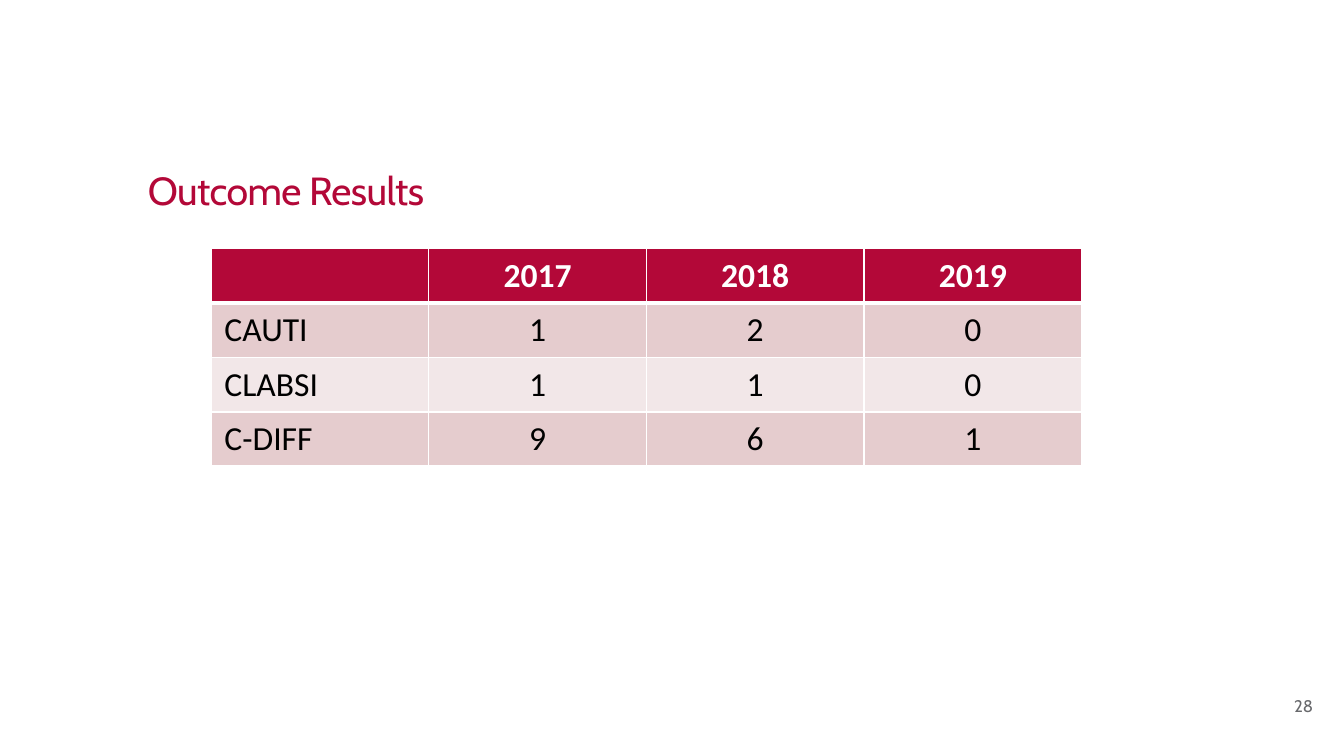
from dataclasses import dataclass

from lxml import etree
from pptx import Presentation
from pptx.dml.color import RGBColor
from pptx.enum.text import MSO_ANCHOR, PP_ALIGN
from pptx.oxml.ns import qn
from pptx.util import Emu, Pt

PX = 4572
LEFT = PP_ALIGN.LEFT
CENTER = PP_ALIGN.CENTER
RIGHT = PP_ALIGN.RIGHT
MIDDLE = MSO_ANCHOR.MIDDLE

CRIMSON = "B30838"
WHITE = "FFFFFF"
BLACK = "000000"
GRAY = "696A6D"
ROSE = "E5CCCE"
PALE_ROSE = "F2E7E8"

COLUMN_WIDTH = 324
ROW_HEIGHT = 81
THIN, THICK = 1, 3


@dataclass(frozen=True)
class TextStyle:
    font: str
    size: int
    color: str
    align: PP_ALIGN = LEFT
    bold: bool = False


@dataclass(frozen=True)
class Box:
    left: int
    top: int
    width: int
    height: int

    def emu(self) -> list[Emu]:
        return [px(n) for n in (self.left, self.top, self.width, self.height)]


@dataclass(frozen=True)
class ResultRow:
    values: tuple[str, ...]
    fill: str
    color: str = BLACK
    bold: bool = False
    top_line: int = THIN
    bottom_line: int = THIN


RESULTS = (
    ResultRow(("", "2017", "2018", "2019"), CRIMSON, WHITE, True, bottom_line=THICK),
    ResultRow(("CAUTI", "1", "2", "0"), ROSE, top_line=THICK),
    ResultRow(("CLABSI", "1", "1", "0"), PALE_ROSE),
    ResultRow(("C-DIFF", "9", "6", "1"), ROSE),
)


def px(length: int) -> Emu:
    return Emu(length * PX)


def rgb(color: str) -> RGBColor:
    return RGBColor.from_string(color)


def write(frame, text: str, style: TextStyle) -> None:
    frame.text = text
    paragraph = frame.paragraphs[0]
    paragraph.alignment = style.align
    for target in paragraph.runs or [paragraph]:
        target.font.name = style.font
        target.font.size = Pt(style.size)
        target.font.bold = style.bold
        target.font.color.rgb = rgb(style.color)


def write_box(shape, box: Box, text: str, style: TextStyle) -> None:
    shape.left, shape.top, shape.width, shape.height = box.emu()
    frame = shape.text_frame
    frame.margin_left = frame.margin_right = 0
    frame.margin_top = frame.margin_bottom = 0
    frame.vertical_anchor = MIDDLE
    frame.word_wrap = True
    write(frame, text, style)


def add_border(cell, side: str, width: int) -> None:
    properties = cell._tc.get_or_add_tcPr()
    line = etree.SubElement(properties, qn(f"a:{side}"), w=str(Pt(width)))
    fill = etree.SubElement(line, qn("a:solidFill"))
    etree.SubElement(fill, qn("a:srgbClr"), val=WHITE)


def fill_cell(cell, text: str, row: ResultRow, align: PP_ALIGN) -> None:
    write(cell.text_frame, text, TextStyle("Calibri", 18, row.color, align, row.bold))
    add_border(cell, "lnL", THIN)
    add_border(cell, "lnR", THIN)
    add_border(cell, "lnT", row.top_line)
    add_border(cell, "lnB", row.bottom_line)
    cell.fill.solid()
    cell.fill.fore_color.rgb = rgb(row.fill)


def add_results(slide, left: int, top: int, rows: tuple[ResultRow, ...]) -> None:
    column_count = len(rows[0].values)
    box = Box(left, top, COLUMN_WIDTH * column_count, ROW_HEIGHT * len(rows))
    table = slide.shapes.add_table(len(rows), column_count, *box.emu()).table
    for row_index, row in enumerate(rows):
        for column_index, value in enumerate(row.values):
            align = CENTER if column_index or row_index == 0 else LEFT
            fill_cell(table.cell(row_index, column_index), value, row, align)


def main() -> None:
    presentation = Presentation()
    presentation.slide_width = px(2000)
    presentation.slide_height = px(1125)
    slide = presentation.slides.add_slide(presentation.slide_layouts[5])

    title = slide.shapes.title
    write_box(title, Box(220, 200, 1586, 174), "Outcome Results",
              TextStyle("Cabin", 21, CRIMSON))
    heading = title.text_frame.paragraphs[0]
    heading.line_spacing = 0.9
    heading.runs[0].font._element.set("spc", "-30")

    page_box = Box(1780, 1020, 174, 60)
    page_number = slide.shapes.add_textbox(*page_box.emu())
    write_box(page_number, page_box, "28", TextStyle("Cabin", 9, GRAY, RIGHT))

    add_results(slide, 314, 370, RESULTS)
    presentation.save("out.pptx")


if __name__ == "__main__":
    main()
